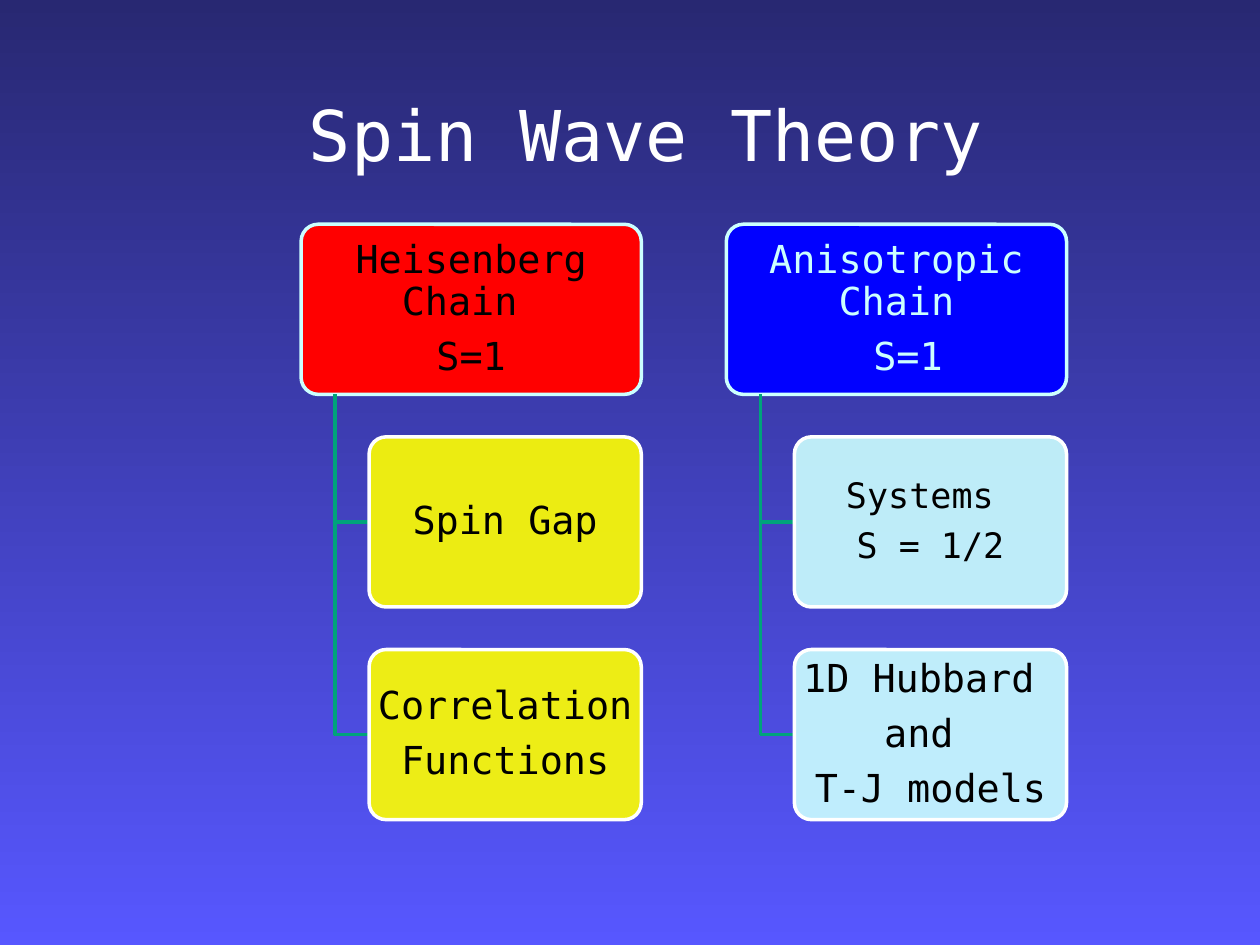
from dataclasses import dataclass

from lxml.etree import SubElement
from pptx import Presentation
from pptx.dml.color import RGBColor
from pptx.enum.shapes import MSO_SHAPE as Shape
from pptx.enum.text import MSO_ANCHOR as Anchor, PP_ALIGN as Align
from pptx.oxml.ns import qn
from pptx.util import Inches, Pt

FONT = "DejaVu Sans Mono"
BLACK, WHITE, ICE, YELLOW, GREEN = "000000", "FFFFFF", "CCFFFF", "FFFF00", "00A37B"

# The tree sits on a square grid: a box is 4 units high, with 1 unit between boxes.
BOX_HEIGHT = 1.35
UNIT = BOX_HEIGHT / 4
LEFT, TOP = 2.39, 1.78
ROOT_WIDTH, CHILD_INDENT, TRUNK_INDENT = 8, 1.6, 0.8
COLUMN_PITCH, ROW_PITCH = 10, 5


@dataclass(frozen=True)
class Node:
    lines: tuple[str, ...]
    size: int = 22


@dataclass(frozen=True)
class Branch:
    root: Node
    root_fill: str
    root_text: str
    child_fill: str
    children: tuple[Node, ...]


BRANCHES = (
    Branch(Node(("Heisenberg Chain ", "S=1")), "FF0000", BLACK, YELLOW,
           (Node(("Spin Gap",)), Node(("Correlation ", "Functions")))),
    Branch(Node(("Anisotropic Chain", " S=1")), "0101FF", ICE, ICE,
           (Node(("Systems ", "S = 1/2"), 20),
            Node(("1D Hubbard ", "and ", "T-J models")))),
)


def color(value: str) -> RGBColor:
    return RGBColor.from_string(value)


def grid_x(column: float) -> int:
    return Inches(LEFT + column * UNIT)


def grid_y(row: float) -> int:
    return Inches(TOP + row * UNIT)


def add_text(para, text: str, size: int, text_color: str) -> None:
    para.alignment = Align.CENTER
    span = para.add_run()
    span.text = text
    span.font.name = FONT
    span.font.size = Pt(size)
    span.font.color.rgb = color(text_color)


def paint_background(page) -> None:
    fill = page.background.fill
    fill.gradient()
    fill.gradient_angle = 270
    for stop, value in zip(fill.gradient_stops, ("282872", "5757FF")):
        stop.color.rgb = color(value)


def add_title(page, text: str) -> None:
    box = page.shapes.add_textbox(Inches(0.75), Inches(0.68), Inches(8.75), Inches(0.75))
    box.text_frame.word_wrap = True
    add_text(box.text_frame.paragraphs[0], text, 40, WHITE)


def add_node(page, node: Node, column: float, row: float, width: float,
             fill: str, line: str, text_color: str, opacity: int = 100) -> None:
    box = page.shapes.add_shape(Shape.ROUNDED_RECTANGLE, grid_x(column), grid_y(row),
                                Inches(width * UNIT), Inches(BOX_HEIGHT))
    box.shadow.inherit = False
    box.adjustments[0] = 0.1
    box.fill.solid()
    box.fill.fore_color.rgb = color(fill)
    if opacity < 100:
        solid = box.fill._xPr.find(qn("a:solidFill"))
        SubElement(solid[0], qn("a:alpha"), val=str(opacity * 1000))
    box.line.color.rgb = color(line)
    box.line.width = Pt(2)

    frame = box.text_frame
    frame.word_wrap = True
    frame.vertical_anchor = Anchor.MIDDLE
    frame.margin_left = frame.margin_right = Inches(0.01)
    frame.margin_top = frame.margin_bottom = 0
    for index, text in enumerate(node.lines):
        para = frame.add_paragraph() if index else frame.paragraphs[0]
        para.line_spacing = 0.9
        para.space_after = Pt(0.35 * node.size)
        add_text(para, text, node.size, text_color)


def add_elbow(page, column: float, child_row: float) -> None:
    """Line from the underside of a root box to the left side of a child."""
    trunk, middle = grid_x(column + TRUNK_INDENT), grid_y(child_row + 2)
    builder = page.shapes.build_freeform(trunk, grid_y(4))
    builder.add_line_segments(
        [(trunk, middle), (grid_x(column + CHILD_INDENT), middle)], close=False)
    elbow = builder.convert_to_shape()
    elbow.shadow.inherit = False
    elbow.fill.background()
    elbow.line.color.rgb = color(GREEN)
    elbow.line.width = Pt(2)


def add_branch(page, branch: Branch, column: float) -> None:
    add_node(page, branch.root, column, 0, ROOT_WIDTH,
             branch.root_fill, ICE, branch.root_text)
    for index, child in enumerate(branch.children, start=1):
        row = index * ROW_PITCH
        add_elbow(page, column, row)
        add_node(page, child, column + CHILD_INDENT, row, ROOT_WIDTH - CHILD_INDENT,
                 branch.child_fill, WHITE, BLACK, opacity=90)


def main() -> None:
    deck = Presentation()
    deck.slide_width, deck.slide_height = Inches(10), Inches(7.5)
    page = deck.slides.add_slide(deck.slide_layouts[6])
    paint_background(page)
    for index, branch in enumerate(BRANCHES):
        add_branch(page, branch, index * COLUMN_PITCH)
    add_title(page, "Spin Wave Theory")
    deck.save("out.pptx")


if __name__ == "__main__":
    main()
